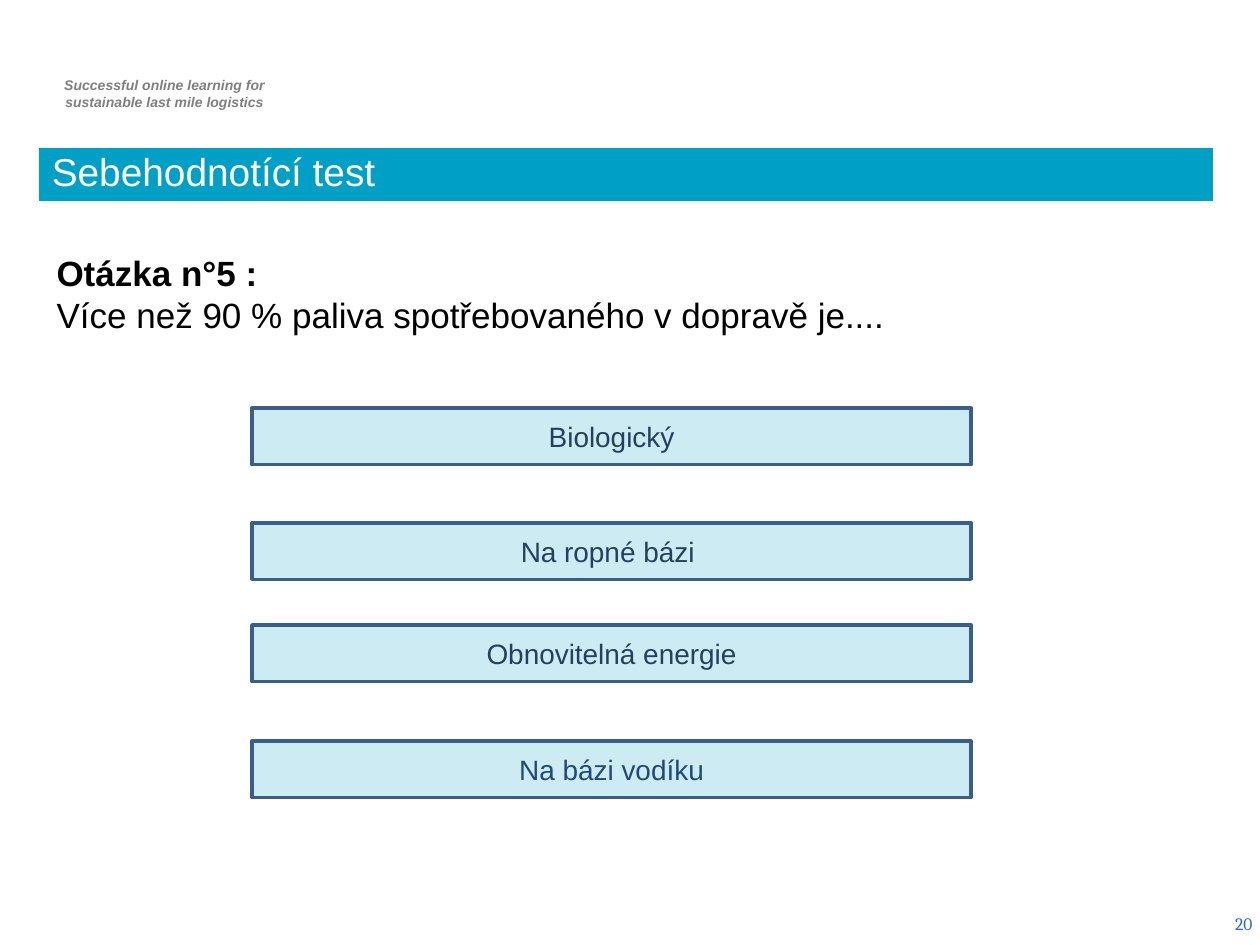
"""Build the self-assessment slide with a question and four answer boxes."""
from lxml import etree
from pptx import Presentation
from pptx import util as u
from pptx.dml.color import RGBColor
from pptx.enum import shapes, text
from pptx.oxml.ns import qn

COLORS = {
    "band": "009FC6",
    "border": "395E89",
    "answer": "244061",
    "last_answer": "1F497D",
    "tagline": "7F7F7F",
    "number": "3366CC",
    "white": "FFFFFF",
    "black": "000000",
}


def write(shape, lines, size, color, font="Arial", align="LEFT", anchor="TOP",
          bold=(), italic=False, spacing=None):
    frame = shape.text_frame
    frame.word_wrap = True
    frame.auto_size = text.MSO_AUTO_SIZE.NONE
    frame.vertical_anchor = text.MSO_ANCHOR[anchor]
    frame.text = "\n".join(lines)
    for index, paragraph in enumerate(frame.paragraphs):
        paragraph.alignment = text.PP_ALIGN[align]
        paragraph.line_spacing = spacing
        for run in paragraph.runs:
            run.font.name = font
            run.font.size = u.Pt(size)
            run.font.bold = index in bold
            run.font.italic = italic
            run.font.color.rgb = RGBColor.from_string(COLORS[color])


def paint(shape, fill, line, width):
    shape.fill.solid()
    shape.fill.fore_color.rgb = RGBColor.from_string(COLORS[fill])
    shape.line.color.rgb = RGBColor.from_string(COLORS[line])
    shape.line.width = u.Pt(width)


presentation = Presentation()
presentation.slide_width = u.Cm(25.4)
presentation.slide_height = u.Cm(19.05)
slide = presentation.slides.add_slide(presentation.slide_layouts[5])

title = slide.shapes.title
title.left, title.top, title.width, title.height = (
    u.Cm(0.79), u.Cm(3), u.Cm(23.65), u.Cm(1.04))
paint(title, "band", "band", 0.75)
write(title, ["Sebehodnotící test"], 22.2, "white", anchor="BOTTOM", spacing=0.8)

tagline = slide.shapes.add_textbox(u.Cm(0.74), u.Cm(1.42), u.Cm(5.16), u.Cm(0.94))
write(tagline, ["Successful online learning for", "sustainable last mile logistics"],
      8, "tagline", align="CENTER", bold=(0, 1), italic=True)

number = slide.shapes.add_textbox(u.Cm(19.58), u.Cm(18.11), u.Cm(5.92), u.Cm(1.02))
write(number, ["20"], 10, "number", font="Cambria", align="RIGHT", anchor="MIDDLE")

question = slide.shapes.add_textbox(u.Cm(0.89), u.Cm(4.95), u.Cm(23.65), u.Cm(1.96))
write(question, ["Otázka n°5 :", "Více než 90 % paliva spotřebovaného v dopravě je...."],
      20, "black", bold=(0,))

answers = [
    ("Biologický", 8.23, "answer"),
    ("Na ropné bázi ", 10.54, "answer"),
    ("Obnovitelná energie", 12.6, "answer"),
    ("Na bázi vodíku", 14.94, "last_answer"),
]
for label, top, color in answers:
    answer = slide.shapes.add_shape(
        shapes.MSO_SHAPE.RECTANGLE, u.Cm(5.08), u.Cm(top), u.Cm(14.5), u.Cm(1.14))
    answer.shadow.inherit = False
    paint(answer, "band", "border", 2)
    fill_color = answer.fill._xPr.find(qn("a:solidFill"))[0]
    etree.SubElement(fill_color, qn("a:alpha"), val="20000")
    write(answer, [label], 16, color, align="CENTER", anchor="MIDDLE")

presentation.save("out.pptx")
